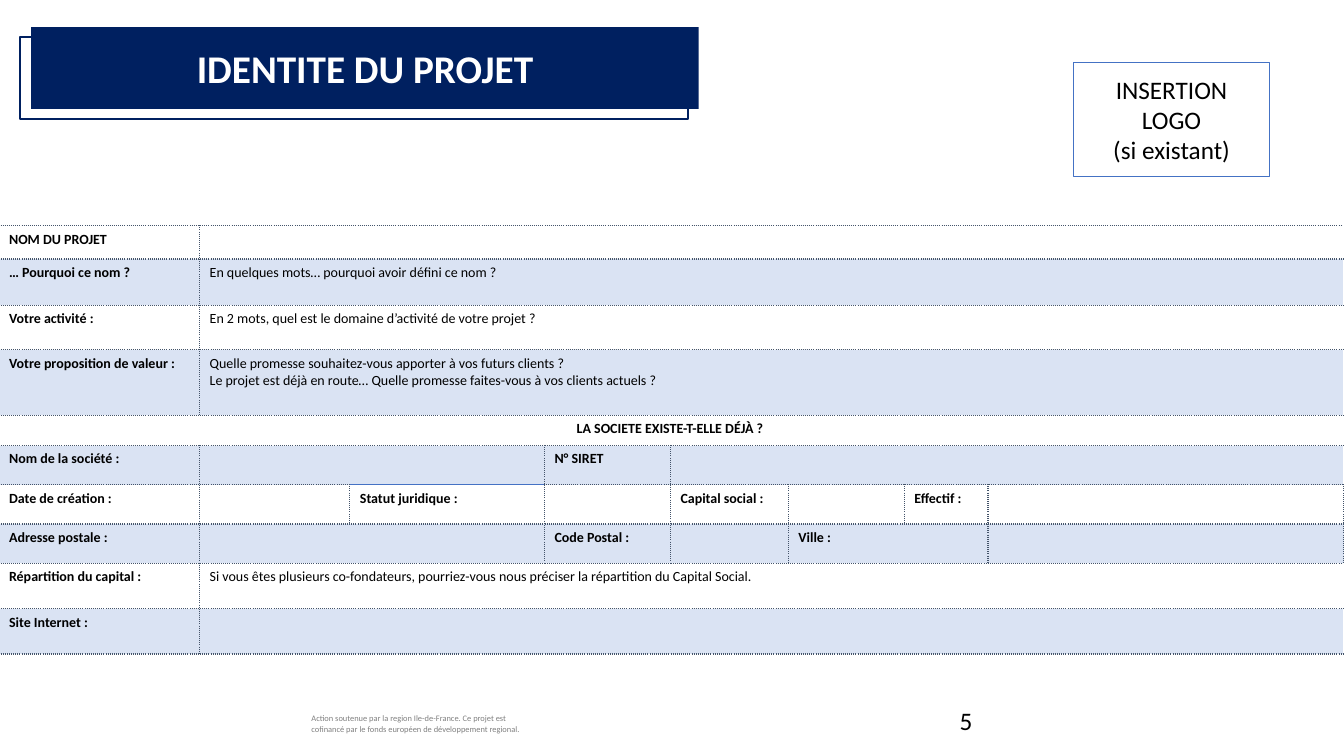
from dataclasses import dataclass

from lxml import etree
from pptx import Presentation
from pptx import util as u
from pptx.dml.color import RGBColor
from pptx.enum import shapes, text
from pptx.oxml import ns

HUES = {"navy": "002060", "blue": "4472C4", "pale": "DAE3F3", "slate": "44546A",
        "grey": "808080", "black": "000000", "white": "FFFFFF"}
COLS = [1.99, 1.49, 1.93, 1.25, 1.17, 1.15, 0.83, 3.53]
ROWS = [0.33, 0.46, 0.44, 0.65, 0.3, 0.39, 0.39, 0.39, 0.45, 0.45]
CENTER = text.PP_ALIGN.CENTER


@dataclass
class Field:
    """A form cell with its text and the number of columns it covers."""
    words: str = ""
    span: int = 1
    bold: bool = True
    mid: bool = False
    top: str = ""


@dataclass
class Box:
    """A rectangle with its place and colours."""
    left: float
    top: float
    wide: float
    high: float
    fill: str = ""
    line: str = ""
    width: float = 1


def label(words: str) -> Field:
    """Return a bold one-column cell."""
    return Field(words)


def answer(words: str = "", span: int = 7) -> Field:
    """Return a plain cell."""
    return Field(words, span, bold=False)


FORM = [
    [label("NOM DU PROJET"), answer()],
    [label("… Pourquoi ce nom ?"), answer("En quelques mots… pourquoi avoir défini ce nom ?")],
    [label("Votre activité :"),
     answer("En 2 mots, quel est le domaine d’activité de votre projet ?")],
    [label("Votre proposition de valeur :"),
     answer("Quelle promesse souhaitez-vous apporter à vos futurs clients ?\n"
            "Le projet est déjà en route… Quelle promesse faites-vous à vos clients actuels ?")],
    [Field("LA SOCIETE EXISTE-T-ELLE DÉJÀ ? ", 8, mid=True)],
    [label("Nom de la société :"), answer(span=2), label("N° SIRET"), answer(span=4)],
    [label("Date de création :"), answer(span=1), Field("Statut juridique :", top="blue"),
     answer(span=1), label("Capital social :"), answer(span=1), label("Effectif :"),
     answer(span=1)],
    [label("Adresse postale :"), answer(span=2), label("Code Postal :"), answer(span=1),
     Field("Ville :", 2), answer(span=1)],
    [label("Répartition du capital :"),
     answer("Si vous êtes plusieurs co-fondateurs, pourriez-vous nous préciser "
            "la répartition du Capital Social.")],
    [label("Site Internet :"), answer()],
]
LOGO = Box(10.65, 0.62, 1.94, 1.13, "white", "blue")
FRAME = Box(0.2, 0.37, 6.62, 0.81, line="navy", width=1.5)
BAND = Box(0.31, 0.27, 6.62, 0.81, "navy")


def tint(name: str) -> RGBColor:
    """Return a named colour."""
    return RGBColor.from_string(HUES[name])


def write(frame, words: str, *, size: float, hue: str = "black",
          bold: bool = False, align=None) -> None:
    """Fill a text frame with one paragraph per line of words."""
    for num, line in enumerate(words.split("\n")):
        para = frame.add_paragraph() if num else frame.paragraphs[0]
        if align is not None:
            para.alignment = align
        if not line:
            etree.SubElement(para._p, ns.qn("a:endParaRPr"), sz=str(int(size * 100)))
            continue
        run = para.add_run()
        run.text = line
        run.font.name = "Calibri"
        run.font.size = u.Pt(size)
        run.font.bold = bold
        run.font.color.rgb = tint(hue)


def block(slide, box: Box):
    """Draw a rectangle."""
    shape = slide.shapes.add_shape(shapes.MSO_SHAPE.RECTANGLE, u.Inches(box.left),
                                   u.Inches(box.top), u.Inches(box.wide), u.Inches(box.high))
    shape.shadow.inherit = False
    if box.fill:
        shape.fill.solid()
        shape.fill.fore_color.rgb = tint(box.fill)
    else:
        shape.fill.background()
    if box.line:
        shape.line.color.rgb = tint(box.line)
        shape.line.width = u.Pt(box.width)
    else:
        shape.line.fill.background()
    return shape


def note(slide, words: str, left: float, top: float, wide: float, high: float, **style) -> None:
    """Place a wrapped text box."""
    frame = slide.shapes.add_textbox(u.Inches(left), u.Inches(top), u.Inches(wide),
                                     u.Inches(high)).text_frame
    frame.word_wrap = True
    write(frame, words, **style)


def edge(cell, side: str, hue: str, dash: str) -> None:
    """Set one border of a cell."""
    line = etree.SubElement(cell._tc.get_or_add_tcPr(), ns.qn(f"a:ln{side}"), w="12700")
    fill = etree.SubElement(line, ns.qn("a:solidFill"))
    etree.SubElement(fill, ns.qn("a:srgbClr"), val=HUES[hue])
    etree.SubElement(line, ns.qn("a:prstDash"), val=dash)


def paint(cell, field: Field, first: bool, last: bool, shade: bool) -> None:
    """Give a cell its outer borders and its fill."""
    for side, shown in (("L", first), ("R", last), ("T", True), ("B", True)):
        if side == "T" and field.top:
            edge(cell, side, field.top, "solid")
        elif shown:
            edge(cell, side, "slate", "sysDot")
    if shade:
        cell.fill.solid()
        cell.fill.fore_color.rgb = tint("pale")
    else:
        cell.fill.background()


def grid(slide) -> None:
    """Draw the form, shading every second row."""
    table = slide.shapes.add_table(len(ROWS), len(COLS), u.Inches(-0.01), u.Inches(2.24),
                                   u.Inches(sum(COLS)), u.Inches(sum(ROWS))).table
    table.first_row = table.horz_banding = False
    for col, wide in zip(table.columns, COLS):
        col.width = u.Inches(wide)
    for row, (high, fields) in enumerate(zip(ROWS, FORM)):
        table.rows[row].height = u.Inches(high)
        start = 0
        for field in fields:
            end = start + field.span - 1
            for col in range(start, end + 1):
                cell = table.cell(row, col)
                paint(cell, field, col == start, col == end, row % 2 == 1)
                write(cell.text_frame, field.words if col == start else "", size=10,
                      bold=field.bold, align=CENTER if field.mid else None)
            if field.span > 1:
                table.cell(row, start).merge(table.cell(row, end))
            start = end + 1


def head(slide) -> None:
    """Set the title above its band."""
    title = slide.shapes.title
    title.left, title.top = u.Inches(0.31), u.Inches(0.39)
    title.width, title.height = u.Inches(6.62), u.Inches(0.57)
    title.text_frame.vertical_anchor = text.MSO_ANCHOR.MIDDLE
    title.text_frame.auto_size = text.MSO_AUTO_SIZE.NONE
    write(title.text_frame, "IDENTITE DU PROJET", size=28, hue="white", bold=True, align=CENTER)
    slide.shapes._spTree.append(title._element)


def main() -> None:
    """Build and save the slide."""
    deck = Presentation()
    deck.slide_width, deck.slide_height = u.Inches(13.33), u.Inches(7.5)
    slide = deck.slides.add_slide(deck.slide_layouts[5])
    note(slide, "Action soutenue par la region Ile-de-France. Ce projet est cofinancé "
         "par le fonds européen de développement regional.",
         2.99, 7.03, 2.38, 0.3, size=6, hue="grey")
    grid(slide)
    logo = block(slide, LOGO).text_frame
    logo.word_wrap = True
    logo.vertical_anchor = text.MSO_ANCHOR.MIDDLE
    write(logo, "INSERTION LOGO\n(si existant)", size=18, align=CENTER)
    block(slide, FRAME)
    block(slide, BAND)
    head(slide)
    note(slide, "5", 9.42, 6.95, 3, 0.4, size=18)
    deck.save("out.pptx")


if __name__ == "__main__":
    main()
